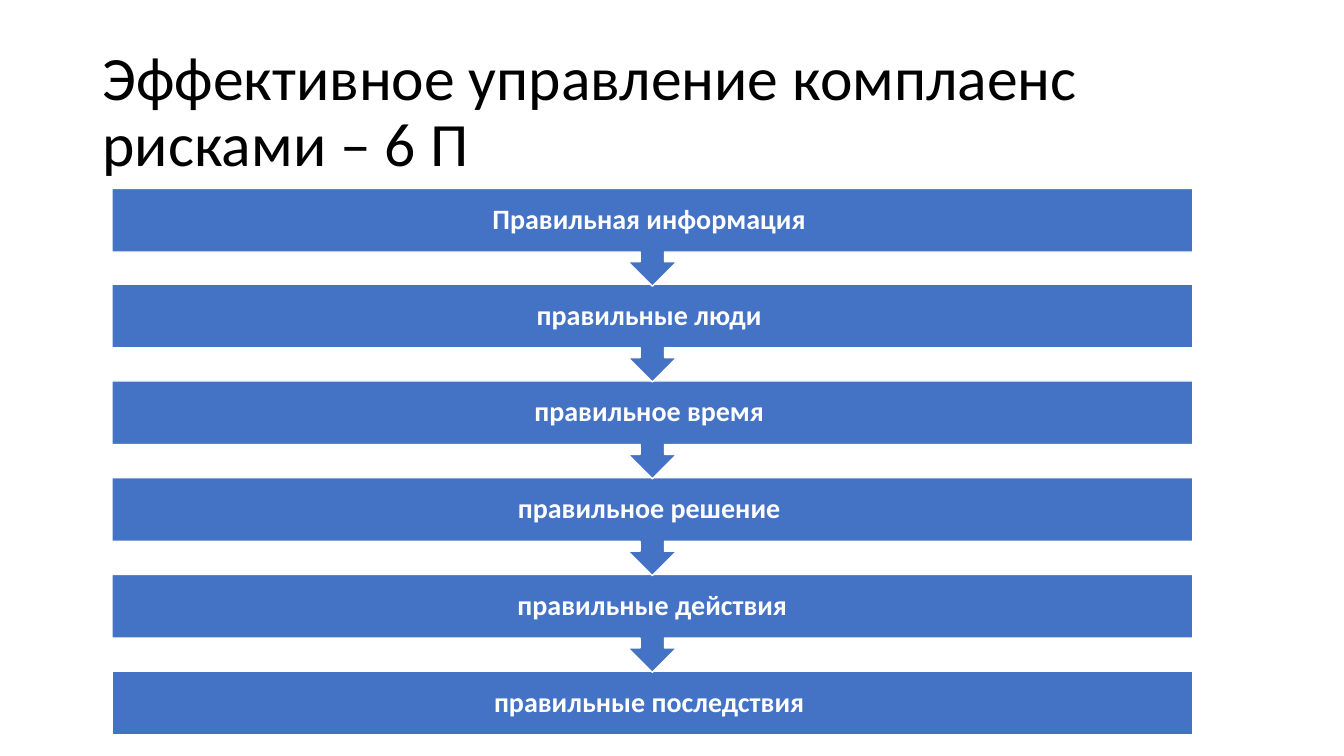
from pptx import Presentation
from pptx.dml.color import RGBColor
from pptx.enum.shapes import MSO_SHAPE
from pptx.enum.text import MSO_ANCHOR, PP_ALIGN
from pptx.util import Pt

PX = 9144
COLORS = {"ink": "000000", "bar": "4472C4", "white": "FFFFFF"}
TITLE = "Эффективное управление комплаенс рисками – 6 П"
STEPS = [
    "Правильная информация ",
    "правильные люди ",
    "правильное время ",
    "правильное решение ",
    "правильные действия",
    "правильные последствия ",
]
LEFT, WIDTH = 111, 1072
FIRST, LAST = 187, 666
BAR, CALLOUT = 63, 97


def px(*sizes):
    """Turn pixel lengths into EMU."""
    return [size * PX for size in sizes]


def color(name):
    """Look up a named colour."""
    return RGBColor.from_string(COLORS[name])


def write(frame, text, size, tint, bold=False, align=PP_ALIGN.LEFT):
    """Put one styled paragraph in a text frame."""
    frame.word_wrap = True
    frame.vertical_anchor = MSO_ANCHOR.MIDDLE
    line = frame.paragraphs[0]
    line.text = text
    line.alignment = align
    line.line_spacing = 0.9
    line.font.name = "Calibri"
    line.font.size = Pt(size)
    line.font.bold = bold
    line.font.color.rgb = color(tint)


def add_title(slide, text):
    """Add the slide heading."""
    box = slide.shapes.add_textbox(*px(92, 40, 1150, 145))
    write(box.text_frame, text, 44, "ink")


def add_step(slide, text, top, last):
    """Add one step, with an arrow below unless it is the last."""
    kind = MSO_SHAPE.RECTANGLE if last else MSO_SHAPE.DOWN_ARROW_CALLOUT
    high = BAR if last else CALLOUT
    step = slide.shapes.add_shape(kind, *px(LEFT, top, WIDTH, high))
    step.shadow.inherit = False
    step.fill.solid()
    step.fill.fore_color.rgb = color("bar")
    step.line.color.rgb = color("white")
    step.line.width = Pt(1)
    frame = step.text_frame
    frame.margin_left = frame.margin_right = 16 * PX
    frame.margin_top = frame.margin_bottom = 16 * PX
    write(frame, text, 20, "white", True, PP_ALIGN.CENTER)


def main():
    """Build and save the slide."""
    deck = Presentation()
    deck.slide_width, deck.slide_height = px(1333, 750)
    slide = deck.slides.add_slide(deck.slide_layouts[6])
    add_title(slide, TITLE)
    end = len(STEPS) - 1
    for i, text in reversed(list(enumerate(STEPS))):
        top = FIRST + (LAST - FIRST) * i // end
        add_step(slide, text, top, i == end)
    deck.save("out.pptx")


if __name__ == "__main__":
    main()
